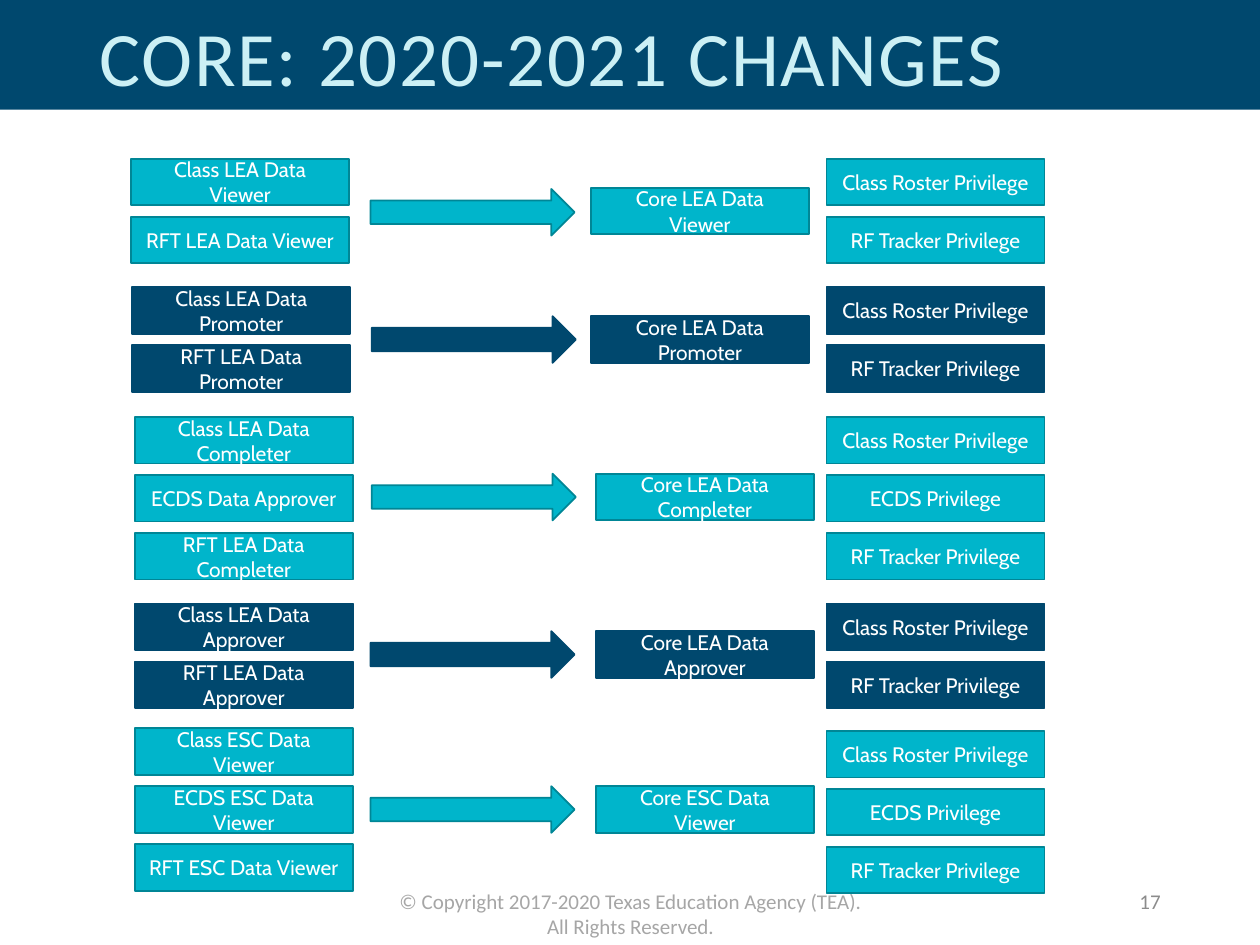
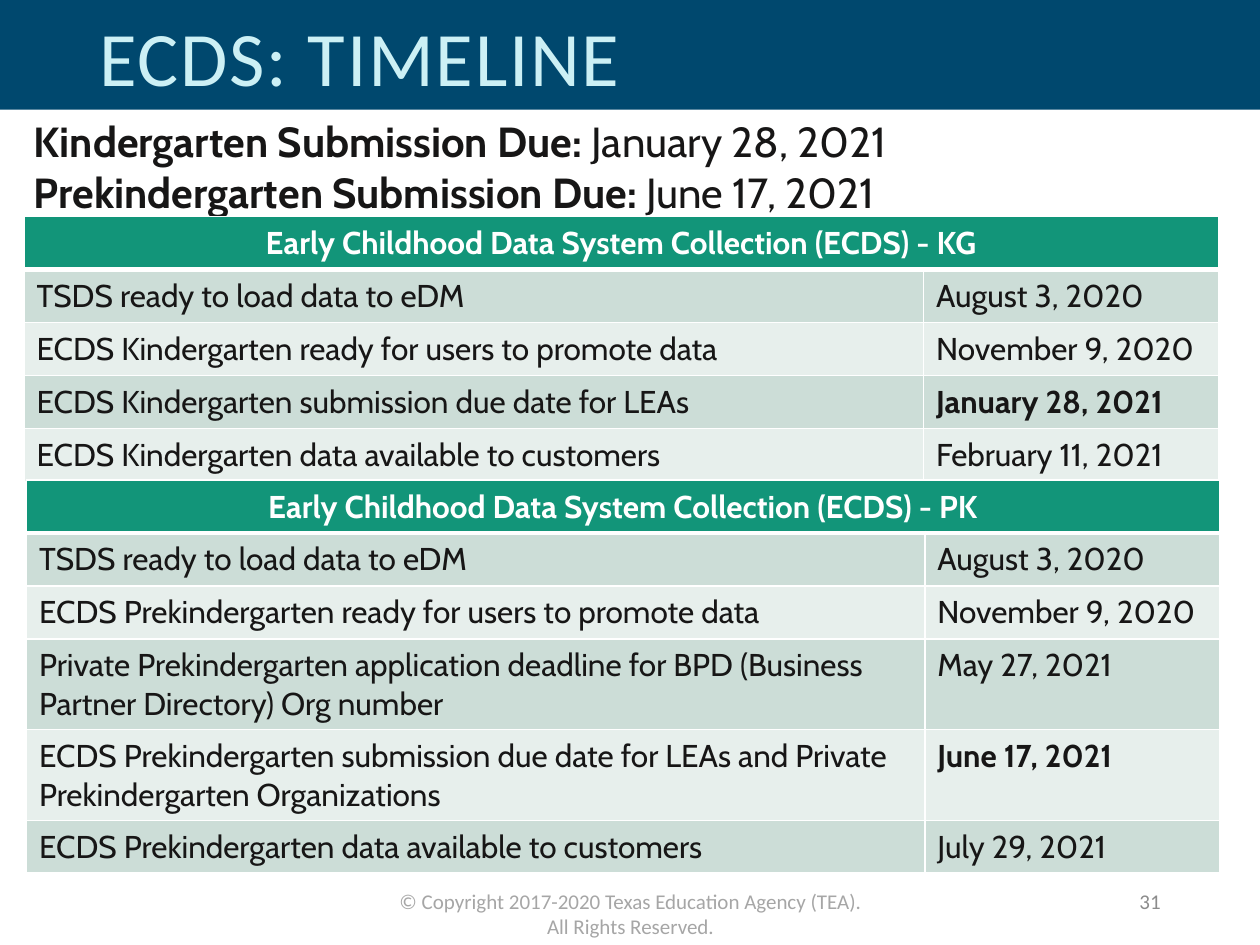
from dataclasses import dataclass

from lxml import etree
from pptx import Presentation
from pptx.dml.color import RGBColor
from pptx.enum import shapes, text
from pptx.oxml import ns
from pptx.util import Inches, Pt


@dataclass(frozen=True)
class Theme:
    navy: str = "00486E"
    cyan: str = "00B5CB"
    cyan_edge: str = "008696"
    title: str = "CCF0F5"
    footer: str = "A6A6A6"
    page: str = "8C8C8C"
    ink: str = "171616"
    white: str = "FFFFFF"
    header: str = "129579"
    stripes: tuple = ("CCDDD7", "E7EFEC")
    heading_font: str = "Calibri"
    body_font: str = "Cabin"
    title_size: int = 44
    due_size: int = 24
    table_size: int = 18
    small_size: int = 12


THEME = Theme()
CYAN = (THEME.cyan, THEME.cyan_edge)
NAVY = (THEME.navy, THEME.navy)
COPYRIGHT = "© Copyright 2017-2020 Texas Education Agency (TEA). All Rights Reserved."

# Role flow geometry
BOX_W, BOX_H, STEP = 1.73, 0.37, 0.46
ARROW_W = 1.62
PRIVILEGE_LEFT = 6.56
CLASS, ECDS, RF = "Class Roster Privilege", "ECDS Privilege", "RF Tracker Privilege"

# colours, (left, top) of old roles, old roles, (left, top) of arrow,
# (left, top) of core role, core role, top of privileges, privileges
ROLE_GROUPS = [
    (CYAN, (1.04, 1.26), ["Class LEA Data Viewer", "RFT LEA Data Viewer"],
     (2.94, 1.5), (4.69, 1.49), "Core LEA Data Viewer", 1.26, [CLASS, RF]),
    (NAVY, (1.05, 2.28), ["Class LEA Data Promoter", "RFT LEA Data Promoter"],
     (2.95, 2.51), (4.69, 2.51), "Core LEA Data Promoter", 2.28, [CLASS, RF]),
    (CYAN, (1.07, 3.31),
     ["Class LEA Data Completer", "ECDS Data Approver", "RFT LEA Data Completer"],
     (2.95, 3.76), (4.73, 3.76), "Core LEA Data Completer", 3.31, [CLASS, ECDS, RF]),
    (NAVY, (1.07, 4.79), ["Class LEA Data Approver", "RFT LEA Data Approver"],
     (2.94, 5.01), (4.73, 5.01), "Core LEA Data Approver", 4.79, [CLASS, RF]),
    (CYAN, (1.07, 5.78),
     ["Class ESC Data Viewer", "ECDS ESC Data Viewer", "RFT ESC Data Viewer"],
     (2.94, 6.24), (4.73, 6.24), "Core ESC Data Viewer", 5.8, [CLASS, ECDS, RF]),
]

DUE_DATES = [
    ("Kindergarten Submission Due: ", "January 28, 2021"),
    ("Prekindergarten Submission Due: ", "June 17, 2021"),
]
KG_DATES = [
    ("TSDS ready to load data to eDM", "August 3, 2020"),
    ("ECDS Kindergarten ready for users to promote data", "November 9, 2020"),
    ("ECDS Kindergarten submission due date for LEAs", "January 28, 2021"),
    ("ECDS Kindergarten data available to customers", "February 11, 2021"),
]
PK_DATES = [
    ("TSDS ready to load data to eDM", "August 3, 2020"),
    ("ECDS Prekindergarten ready for users to promote data", "November 9, 2020"),
    ("Private Prekindergarten application deadline for BPD "
     "(Business Partner Directory) Org number", "May 27, 2021"),
    ("ECDS Prekindergarten submission due date for LEAs and "
     "Private Prekindergarten Organizations", "June 17, 2021"),
    ("ECDS Prekindergarten data available to customers", "July 29, 2021"),
]


def style(paragraph, font_name, size, color, bold=None, align=text.PP_ALIGN.LEFT):
    paragraph.alignment = align
    font = paragraph.font
    font.name, font.size, font.bold = font_name, Pt(size), bold
    font.color.rgb = RGBColor.from_string(color)


def add_text(slide, box, words, size, color, align=text.PP_ALIGN.LEFT,
             anchor=text.MSO_ANCHOR.MIDDLE):
    frame = slide.shapes.add_textbox(*map(Inches, box)).text_frame
    frame.word_wrap = True
    frame.vertical_anchor = anchor
    line = frame.paragraphs[0]
    line.text = words
    style(line, THEME.heading_font, size, color, align=align)
    return line


def add_block(slide, kind, box, fill, edge=None, label=""):
    block = slide.shapes.add_shape(kind, *map(Inches, box))
    block.shadow.inherit = False
    block.fill.solid()
    block.fill.fore_color.rgb = RGBColor.from_string(fill)
    if edge:
        block.line.color.rgb = RGBColor.from_string(edge)
        block.line.width = Pt(1)
    else:
        block.line.fill.background()
    if label:
        frame = block.text_frame
        frame.word_wrap = True
        frame.vertical_anchor = text.MSO_ANCHOR.MIDDLE
        frame.text = label
        style(frame.paragraphs[0], THEME.body_font, THEME.small_size,
              THEME.white, align=text.PP_ALIGN.CENTER)


def add_page(deck, title, number):
    """Blank slide with the shared band, title, copyright line and number."""
    slide = deck.slides.add_slide(deck.slide_layouts[6])
    add_block(slide, shapes.MSO_SHAPE.RECTANGLE, (0, 0, 10, 0.87), THEME.navy)
    add_text(slide, (3.04, 7, 3.93, 0.3), COPYRIGHT, THEME.small_size, THEME.footer,
             text.PP_ALIGN.CENTER, text.MSO_ANCHOR.TOP)
    heading = add_text(slide, (0.69, 0.05, 8, 0.87), title, THEME.title_size, THEME.title)
    heading.line_spacing = 0.9
    heading.runs[0].font._element.set("spc", "100")
    add_text(slide, (7.06, 6.95, 2.25, 0.4), str(number), THEME.small_size, THEME.page,
             text.PP_ALIGN.RIGHT)
    return slide


def add_stack(slide, left, top, labels, colors):
    for i, label in enumerate(labels):
        add_block(slide, shapes.MSO_SHAPE.FLOWCHART_PROCESS,
                  (left, top + i * STEP, BOX_W, BOX_H), *colors, label)


def add_role_group(slide, colors, old_at, old_roles, arrow_at, core_at, core_role,
                   privilege_top, privileges):
    add_stack(slide, *old_at, old_roles, colors)
    add_block(slide, shapes.MSO_SHAPE.RIGHT_ARROW, (*arrow_at, ARROW_W, BOX_H), *colors)
    add_stack(slide, *core_at, [core_role], colors)
    add_stack(slide, PRIVILEGE_LEFT, privilege_top, privileges, colors)


def add_due_dates(slide):
    frame = slide.shapes.add_textbox(*map(Inches, (0.17, 0.87, 9.75, 0.91))).text_frame
    frame.word_wrap = True
    for i, (label, date) in enumerate(DUE_DATES):
        line = frame.paragraphs[0] if i == 0 else frame.add_paragraph()
        for words, bold in ((label, True), (date, False)):
            run = line.add_run()
            run.text, run.font.bold = words, bold
        style(line, THEME.body_font, THEME.due_size, THEME.ink)


def set_borders(cell, bottom=1):
    properties = cell._tc.get_or_add_tcPr()
    for side, width in (("L", 1), ("R", 1), ("T", 1), ("B", bottom)):
        border = etree.SubElement(properties, ns.qn(f"a:ln{side}"), w=str(Pt(width)))
        fill = etree.SubElement(border, ns.qn("a:solidFill"))
        etree.SubElement(fill, ns.qn("a:srgbClr"), val=THEME.white)


def fill_cell(cell, words, fill, color, bold=False, align=text.PP_ALIGN.LEFT, bottom=1):
    cell.margin_left = cell.margin_right = Inches(0.1)
    cell.margin_top = cell.margin_bottom = Inches(0.06)
    set_borders(cell, bottom)
    cell.fill.solid()
    cell.fill.fore_color.rgb = RGBColor.from_string(fill)
    cell.text = words
    style(cell.text_frame.paragraphs[0], THEME.body_font, THEME.table_size,
          color, bold, align)


def add_timeline(slide, left, top, widths, heights, heading, dates):
    table = slide.shapes.add_table(
        len(dates) + 1, 2, Inches(left), Inches(top),
        Inches(sum(widths)), Inches(sum(heights))).table
    table.first_row = table.horz_banding = False
    for column, width in zip(table.columns, widths):
        column.width = Inches(width)
    for row, height in zip(table.rows, heights):
        row.height = Inches(height)

    # Heading across both columns
    for i, words in enumerate((heading, "")):
        fill_cell(table.cell(0, i), words, THEME.header, THEME.white, True,
                  text.PP_ALIGN.CENTER, bottom=3)
    table.cell(0, 0).vertical_anchor = text.MSO_ANCHOR.MIDDLE
    table.cell(0, 0).merge(table.cell(0, 1))

    # Milestones, with the submission deadline in bold
    deadlines = [date for _, date in DUE_DATES]
    for i, (milestone, date) in enumerate(dates):
        stripe = THEME.stripes[i % 2]
        fill_cell(table.cell(i + 1, 0), milestone, stripe, THEME.ink)
        fill_cell(table.cell(i + 1, 1), date, stripe, THEME.ink, date in deadlines)


def main():
    deck = Presentation()
    deck.slide_width, deck.slide_height = Inches(10), Inches(7.5)

    # Role changes
    changes = add_page(deck, "CORE: 2020-2021 CHANGES", 17)
    for group in ROLE_GROUPS:
        add_role_group(changes, *group)

    # Submission timeline
    timeline = add_page(deck, "ECDS: TIMELINE", 31)
    add_due_dates(timeline)
    collection = "Early Childhood Data System Collection (ECDS) - "
    add_timeline(timeline, 0.19, 1.72, (7.14, 2.34), [0.42] * 5,
                 collection + "KG", KG_DATES)
    add_timeline(timeline, 0.21, 3.81, (7.13, 2.34), [0.42] * 3 + [0.72] * 2 + [0.42],
                 collection + "PK", PK_DATES)

    deck.save("out.pptx")


if __name__ == "__main__":
    main()
